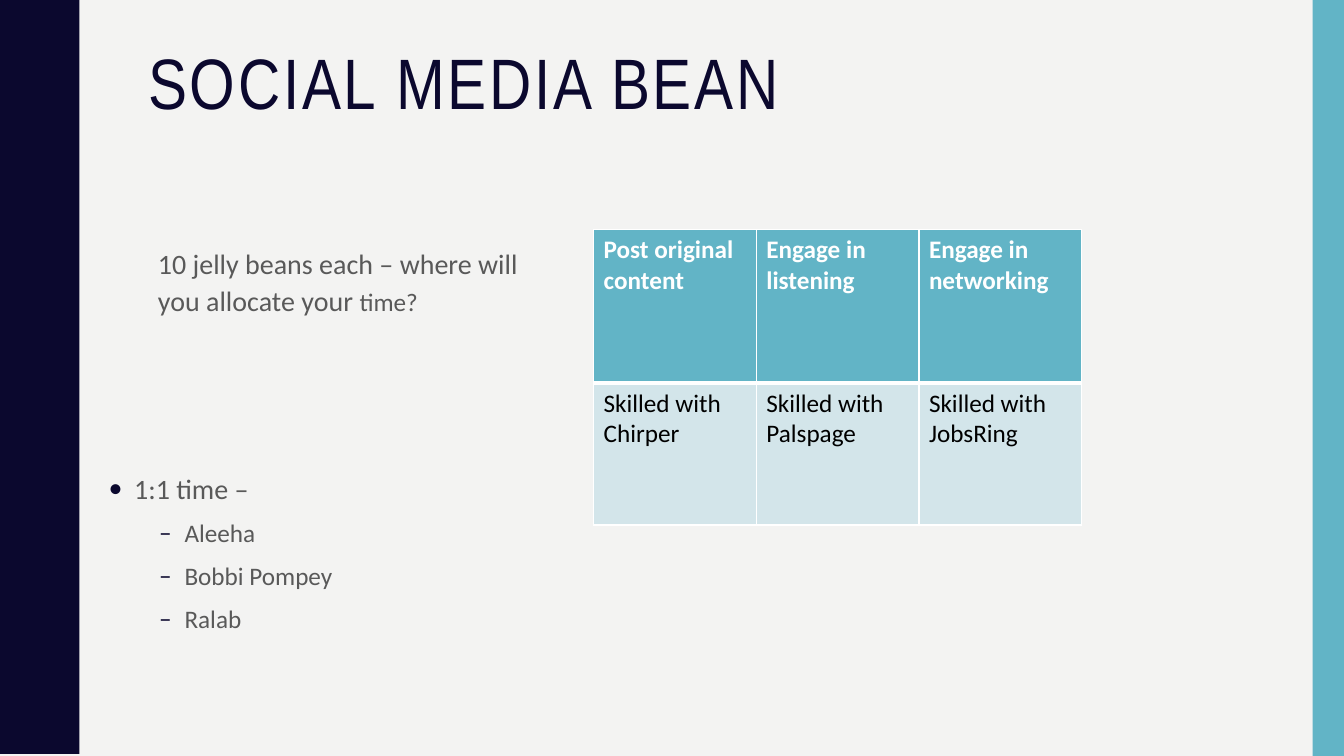
"""Build the social media bean slide with its list and allocation table."""
from lxml.etree import SubElement
from pptx import Presentation
from pptx.dml.color import RGBColor
from pptx.enum.shapes import MSO_SHAPE
from pptx.enum.text import MSO_ANCHOR, MSO_AUTO_SIZE, PP_ALIGN
from pptx.oxml.ns import qn
from pptx.util import Cm, Pt

NAVY, TEAL, PALE, GREY = "0B082E", "62B4C6", "D3E5EA", "595959"
WHITE, BLACK, PAPER = "FFFFFF", "000000", "F3F3F2"
SLIDE_WIDTH, SLIDE_HEIGHT = 33.87, 19.05
STRIPE_WIDTH = 0.79
WAVE_COUNT = 5
HALF_WAVE = [
    (1.98, 0), (1.98, 0.18), (2.01, 0.36), (2.03, 0.51), (2.06, 0.64),
    (2.11, 0.74), (2.16, 0.84), (2.21, 0.97), (2.26, 1.07), (2.31, 1.17),
    (2.36, 1.27), (2.41, 1.4), (2.44, 1.55), (2.46, 1.73), (2.46, 1.91),
]

LARGE = {"size": Pt(20), "name": "Calibri", "color": GREY}
SMALL = {**LARGE, "size": Pt(18)}
HEADING = {"size": Pt(51), "name": "Arial Narrow", "color": NAVY}
TITLE_SPACING = {"line_spacing": 0.9, "space_before": Pt(0), "alignment": PP_ALIGN.LEFT}
BODY_SPACING = {"line_spacing": 1.1, "space_before": Pt(7), "alignment": PP_ALIGN.LEFT}
FRAME = {"word_wrap": True, "auto_size": MSO_AUTO_SIZE.NONE,
         "vertical_anchor": MSO_ANCHOR.TOP,
         "margin_left": Cm(0.25), "margin_right": Cm(0.25),
         "margin_top": Cm(0.13), "margin_bottom": Cm(0.13)}

NAMES = ["Aleeha", "Bobbi Pompey", "Ralab"]
PLACEHOLDERS = [
    ((3.48, 1.07, 28.27, 4.14), TITLE_SPACING,
     [(0, "", 0, [("SOCIAL MEDIA BEAN", HEADING)])]),
    ((3.73, 5.99, 9.8, 3.68), BODY_SPACING,
     [(0, "", 0, [("10 jelly beans each – where will you allocate your ", LARGE),
                  ("time?", SMALL)])]),
    ((2.49, 11.66, 11.89, 5.13), BODY_SPACING,
     [(0, "•", 0.64, [("1:1 time –", LARGE)])]
     + [(1, "–", 1.91, [(name, SMALL)]) for name in NAMES]),
]
HANGING = 0.64

TABLE_LEFT, TABLE_TOP, COLUMN_WIDTH = 14.96, 5.79, 4.1
TABLE_ROWS = [
    (3.86, TEAL, {"size": Pt(18), "name": "Calibri", "color": WHITE, "bold": True},
     {"L": 1, "R": 1, "T": 1, "B": 3},
     ["Post original content", "Engage in listening", "Engage in networking"]),
    (3.58, PALE, {"size": Pt(18), "name": "Calibri", "color": BLACK, "bold": False},
     {"L": 1, "R": 1, "T": 3, "B": 1},
     ["Skilled with Chirper", "Skilled with Palspage", "Skilled with JobsRing"]),
]


def paint(fill, color):
    fill.solid()
    fill.fore_color.rgb = RGBColor.from_string(color)


def apply(target, values):
    for key, value in values.items():
        if key == "color":
            target.color.rgb = RGBColor.from_string(value)
        else:
            setattr(target, key, value)


def add_spans(para, spans):
    for text, look in spans:
        span = para.add_run()
        span.text = text
        apply(span.font, look)


def set_bullet(para, mark, indent):
    properties = para._p.get_or_add_pPr()
    properties.set("marL", str(Cm(indent)))
    properties.set("indent", str(-Cm(HANGING) if mark else 0))
    if mark:
        color = SubElement(properties, qn("a:buClr"))
        SubElement(color, qn("a:srgbClr"), val=NAVY)
        SubElement(properties, qn("a:buFont"), typeface="Calibri")
        SubElement(properties, qn("a:buChar"), char=mark)
    else:
        SubElement(properties, qn("a:buNone"))


def fill_placeholder(box, place, spacing, paragraphs):
    box.left, box.top, box.width, box.height = map(Cm, place)
    apply(box.text_frame, FRAME)
    for index, (level, mark, indent, spans) in enumerate(paragraphs):
        frame = box.text_frame
        para = frame.add_paragraph() if index else frame.paragraphs[0]
        para.level = level
        apply(para, spacing)
        set_bullet(para, mark, indent)
        add_spans(para, spans)


def finish_shape(shape, color):
    shape.shadow.inherit = False
    paint(shape.fill, color)
    shape.line.fill.background()


def add_edges(page):
    period = SLIDE_HEIGHT / WAVE_COUNT
    wave = HALF_WAVE + [(x, period - y) for x, y in reversed(HALF_WAVE[:-1])]
    outline = [(x, y + period * turn) for turn in range(WAVE_COUNT) for x, y in wave]
    builder = page.shapes.build_freeform(0, 0, scale=Cm(1))
    builder.add_line_segments(outline + [(0, SLIDE_HEIGHT)], close=True)
    finish_shape(builder.convert_to_shape(), NAVY)
    stripe = page.shapes.add_shape(
        MSO_SHAPE.RECTANGLE, Cm(SLIDE_WIDTH - STRIPE_WIDTH), 0,
        Cm(STRIPE_WIDTH), Cm(SLIDE_HEIGHT))
    finish_shape(stripe, TEAL)


def add_borders(cell, widths):
    properties = cell._tc.get_or_add_tcPr()
    for side, width in widths.items():
        line = SubElement(properties, qn(f"a:ln{side}"), w=str(Pt(width)))
        solid = SubElement(line, qn("a:solidFill"))
        SubElement(solid, qn("a:srgbClr"), val=WHITE)


def add_bean_table(page):
    column_count = len(TABLE_ROWS[0][-1])
    table = page.shapes.add_table(
        len(TABLE_ROWS), column_count, Cm(TABLE_LEFT), Cm(TABLE_TOP),
        Cm(COLUMN_WIDTH * column_count), Cm(sum(row[0] for row in TABLE_ROWS))).table
    for column in table.columns:
        column.width = Cm(COLUMN_WIDTH)
    for row, (height, color, look, widths, texts) in zip(table.rows, TABLE_ROWS):
        row.height = Cm(height)
        for cell, text in zip(row.cells, texts):
            add_borders(cell, widths)
            paint(cell.fill, color)
            add_spans(cell.text_frame.paragraphs[0], [(text, look)])


def main():
    deck = Presentation()
    deck.slide_width, deck.slide_height = Cm(SLIDE_WIDTH), Cm(SLIDE_HEIGHT)
    page = deck.slides.add_slide(deck.slide_layouts.get_by_name("Two Content"))
    paint(page.background.fill, PAPER)
    for box, content in zip(page.placeholders, PLACEHOLDERS):
        fill_placeholder(box, *content)
    title_span = page.shapes.title.text_frame.paragraphs[0].runs[0]
    title_span.font._element.set("spc", "200")
    add_edges(page)
    add_bean_table(page)
    deck.save("out.pptx")


if __name__ == "__main__":
    main()
